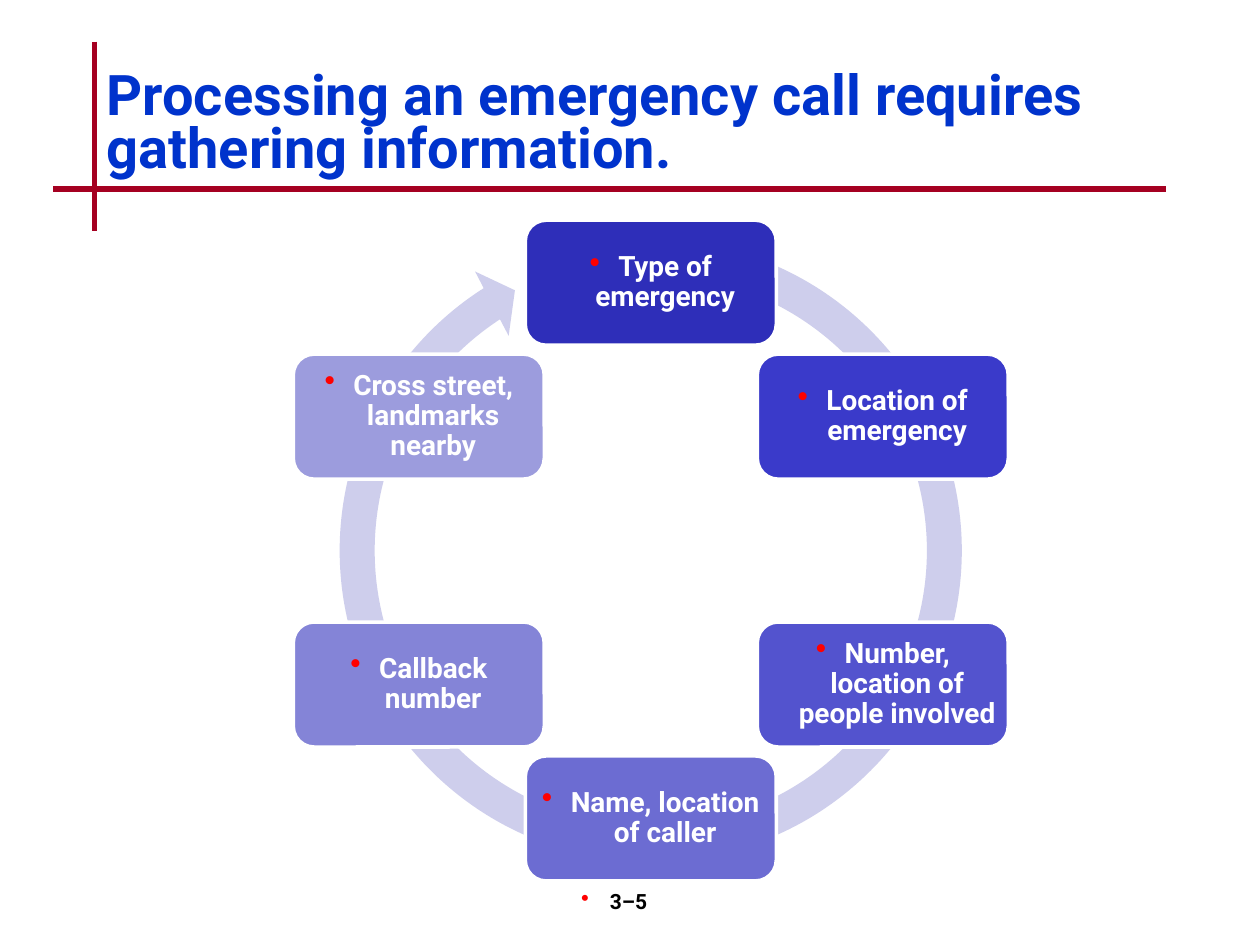
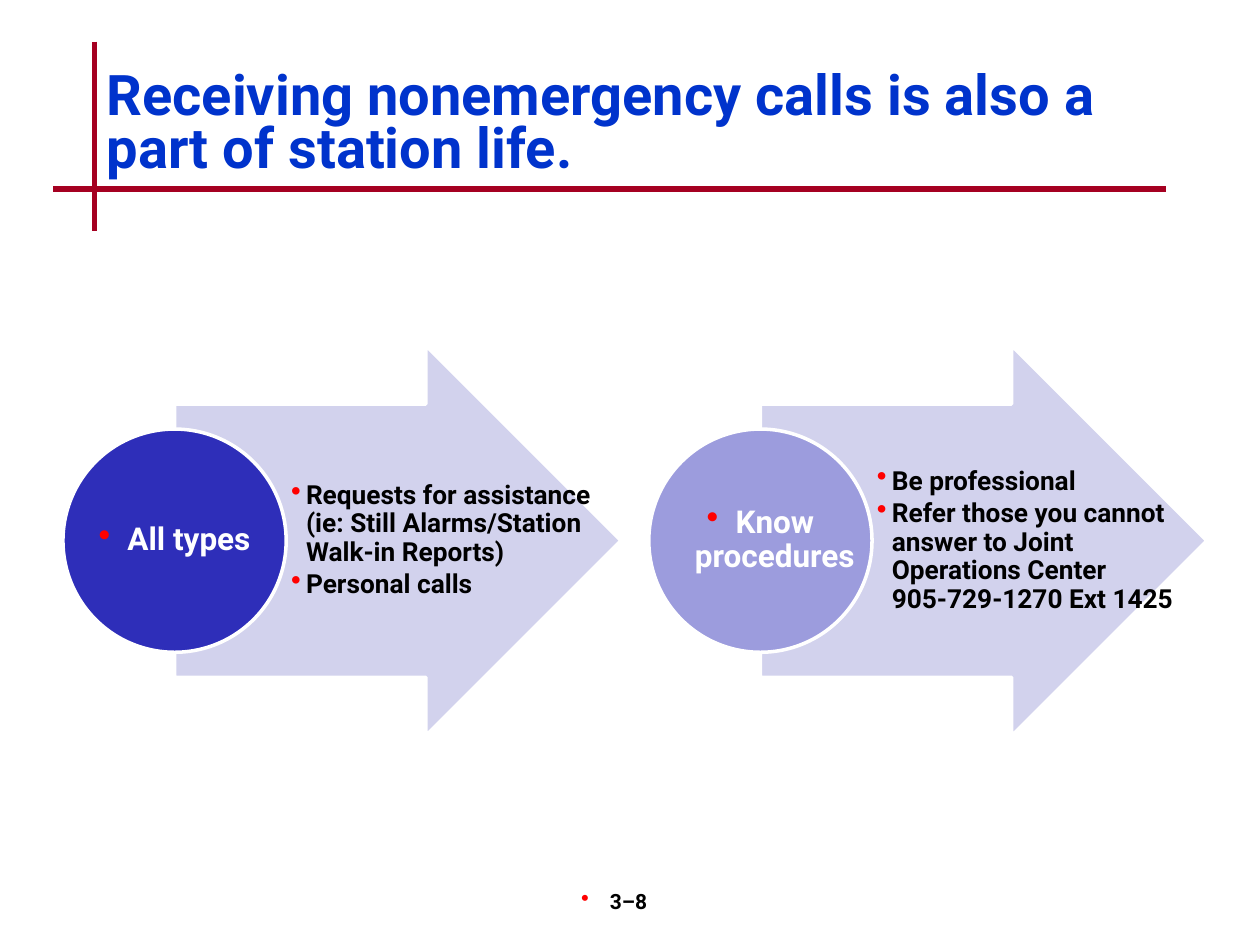
import copy
import math

import pptx
import pptx.dml.color
import pptx.enum.shapes
import pptx.enum.text
import pptx.oxml.ns
import pptx.util
from lxml import etree

Cm = pptx.util.Cm
Pt = pptx.util.Pt
SHAPE = pptx.enum.shapes.MSO_SHAPE
ANCHOR = pptx.enum.text.MSO_ANCHOR
ALIGN = pptx.enum.text.PP_ALIGN
qn = pptx.oxml.ns.qn

# Content
CALL_TITLE = "Processing an emergency call requires gathering information."
CALL_PAGE = "3–5"
CALL_STEPS = [  # clockwise from the top
    ("Type of emergency", "step1"),
    ("Location of emergency", "step2"),
    ("Number, location of people involved", "step3"),
    ("Name, location of caller", "step4"),
    ("Callback number", "step5"),
    ("Cross street, landmarks nearby", "step6"),
]
STATION_TITLE = "Receiving nonemergency calls is also a part of station life."
STATION_PAGE = "3–8"
STATION_TOPICS = [  # \v is a line break
    ("All types", "step1", [
        "Requests for assistance (ie: Still Alarms/Station Walk-in Reports)",
        "Personal calls",
    ]),
    ("Know procedures", "step6", [
        "Be professional",
        "Refer those you cannot answer to Joint Operations Center \v905-729-1270 Ext 1425",
    ]),
]

# Shared look
FONT = "Roboto"
COLORS = {
    "title": "0033CC", "rule": "A50021", "bullet": "FF0000",
    "text": "000000", "white": "FFFFFF", "pale": "CECEEC",
    "step1": "2E2EB9", "step2": "3A3ACA", "step3": "5353CE",
    "step4": "6C6CD2", "step5": "8484D7", "step6": "9C9CDD",
}
RULES = [(1.9, 0.84, 1.9, 4.65), (1.07, 3.81, 23.5, 3.81)]
HANG = 0.58  # bullet indent of centred labels

TITLE_STYLE = {"size": 32, "color": "title", "spacing": 0.8}
FOOTER_STYLE = {"size": 12, "color": "text", "align": ALIGN.CENTER, "hang": HANG,
                "anchor": ANCHOR.TOP, "insets": (0.25, 0.13, 0.69, 0.13)}
STEP_STYLE = {"size": 16, "color": "white", "align": ALIGN.CENTER, "hang": HANG,
              "spacing": 0.9, "insets": (0.05,) * 4}
TOPIC_STYLE = {**STEP_STYLE, "size": 18, "insets": (0.03,) * 4}
DETAIL_STYLE = {"size": 15, "color": "text", "hang": 0.3, "spacing": 0.9,
                "after": 2.5, "insets": (0.1, 0.03, 0.05, 0.03)}

# Ring of steps
RING_CENTER = (13.12, 11.1)
RING_RADIUS = 5.4
RING_SIZE = 13.3
RING_ADJUSTMENTS = (0.053, 3.126, 142.339, 171.236, 0.055)
STEP_SIZE = (5.06, 2.52)

# Row of topics
ROW_MIDDLE = 10.9
ROW_LEFT = 1.27
TOPIC_PITCH = 11.81
CIRCLE = 4.5
ARROW_SIZE = (9, 7.87)


def rgb(name):
    return pptx.dml.color.RGBColor.from_string(COLORS[name])


def set_all(target, values):
    for name, value in values.items():
        setattr(target, name, value)


def add_bullet(para, hang):
    props = para._p.get_or_add_pPr()
    props.set("marL", str(Cm(hang)))
    props.set("indent", str(-Cm(hang)))
    color = etree.SubElement(props, qn("a:buClr"))
    etree.SubElement(color, qn("a:srgbClr"), val=COLORS["bullet"])
    etree.SubElement(props, qn("a:buSzPct"), val="110000")
    etree.SubElement(props, qn("a:buChar"), char="•")


def write(box, lines, style):
    frame = box.text_frame
    left, top, right, bottom = (Cm(inset) for inset in style.get("insets", (0.25, 0.13) * 2))
    set_all(frame, {"word_wrap": True, "vertical_anchor": style.get("anchor", ANCHOR.MIDDLE),
                    "margin_left": left, "margin_top": top,
                    "margin_right": right, "margin_bottom": bottom})
    for index, line in enumerate(lines):
        para = frame.add_paragraph() if index else frame.paragraphs[0]
        para.text = line
        set_all(para, {"alignment": style.get("align", ALIGN.LEFT),
                       "line_spacing": style.get("spacing", 1.0),
                       "space_after": Pt(style.get("after", 0))})
        if "hang" in style:
            add_bullet(para, style["hang"])
        for span in para.runs:
            set_all(span.font, {"name": FONT, "size": Pt(style["size"]), "bold": True})
            span.font.color.rgb = rgb(style["color"])
        for line_break in para._p.findall(qn("a:br")):
            line_break.append(copy.deepcopy(para.runs[0]._r.rPr))


def add_text(page, place, lines, style):
    box = page.shapes.add_textbox(*(Cm(length) for length in place))
    write(box, lines, style)


def add_figure(page, kind, place, fill, adjustments=(), outlined=True):
    figure = page.shapes.add_shape(kind, *(Cm(length) for length in place))
    figure.shadow.inherit = False
    figure.fill.solid()
    figure.fill.fore_color.rgb = rgb(fill)
    if outlined:
        figure.line.color.rgb = rgb("white")
        figure.line.width = Pt(2)
    else:
        figure.line.fill.background()
    for index, value in enumerate(adjustments):
        figure.adjustments[index] = value
    return figure


def add_page(deck, title, number):
    page = deck.slides.add_slide(deck.slide_layouts[6])
    for ends in RULES:
        rule = page.shapes.add_connector(pptx.enum.shapes.MSO_CONNECTOR.STRAIGHT,
                                         *(Cm(length) for length in ends))
        rule.line.color.rgb = rgb("rule")
        rule.line.width = Pt(3)
        etree.SubElement(rule._element.spPr, qn("a:effectLst"))
    add_text(page, (1.9, 1.27, 21.59, 2.54), [title], TITLE_STYLE)
    add_text(page, (9.96, 17.78, 5.28, 1.27), [number], FOOTER_STYLE)
    return page


def add_step_ring(page):
    center_x, center_y = RING_CENTER
    add_figure(page, SHAPE.CIRCULAR_ARROW,
               (center_x - RING_SIZE / 2, center_y - RING_SIZE / 2, RING_SIZE, RING_SIZE),
               "pale", RING_ADJUSTMENTS, outlined=False)
    width, height = STEP_SIZE
    for index, (label, fill) in enumerate(CALL_STEPS):
        angle = math.tau * index / len(CALL_STEPS)
        left = center_x + RING_RADIUS * math.sin(angle) - width / 2
        top = center_y - RING_RADIUS * math.cos(angle) - height / 2
        step = add_figure(page, SHAPE.ROUNDED_RECTANGLE, (left, top, width, height), fill)
        write(step, [label], STEP_STYLE)


def add_topic_row(page):
    width, height = ARROW_SIZE
    arrow_top = ROW_MIDDLE - height / 2
    for index, (label, fill, details) in enumerate(STATION_TOPICS):
        left = ROW_LEFT + index * TOPIC_PITCH
        arrow_left = left + CIRCLE / 2
        arrow = add_figure(page, SHAPE.RIGHT_ARROW, (arrow_left, arrow_top, width, height),
                           "pale", (0.7, 0.5))
        tint = arrow._element.spPr.find(qn("a:solidFill"))[0]
        etree.SubElement(tint, qn("a:alpha"), val="90000")
        add_text(page, (left + CIRCLE, arrow_top, width - CIRCLE / 2, height),
                 details, DETAIL_STYLE)
        circle = (left, ROW_MIDDLE - CIRCLE / 2, CIRCLE, CIRCLE)
        add_figure(page, SHAPE.OVAL, circle, fill)
        add_text(page, circle, [label], TOPIC_STYLE)


def main():
    deck = pptx.Presentation()
    set_all(deck, {"slide_width": Cm(25.4), "slide_height": Cm(19.05)})
    add_step_ring(add_page(deck, CALL_TITLE, CALL_PAGE))
    add_topic_row(add_page(deck, STATION_TITLE, STATION_PAGE))
    deck.save("out.pptx")


if __name__ == "__main__":
    main()
